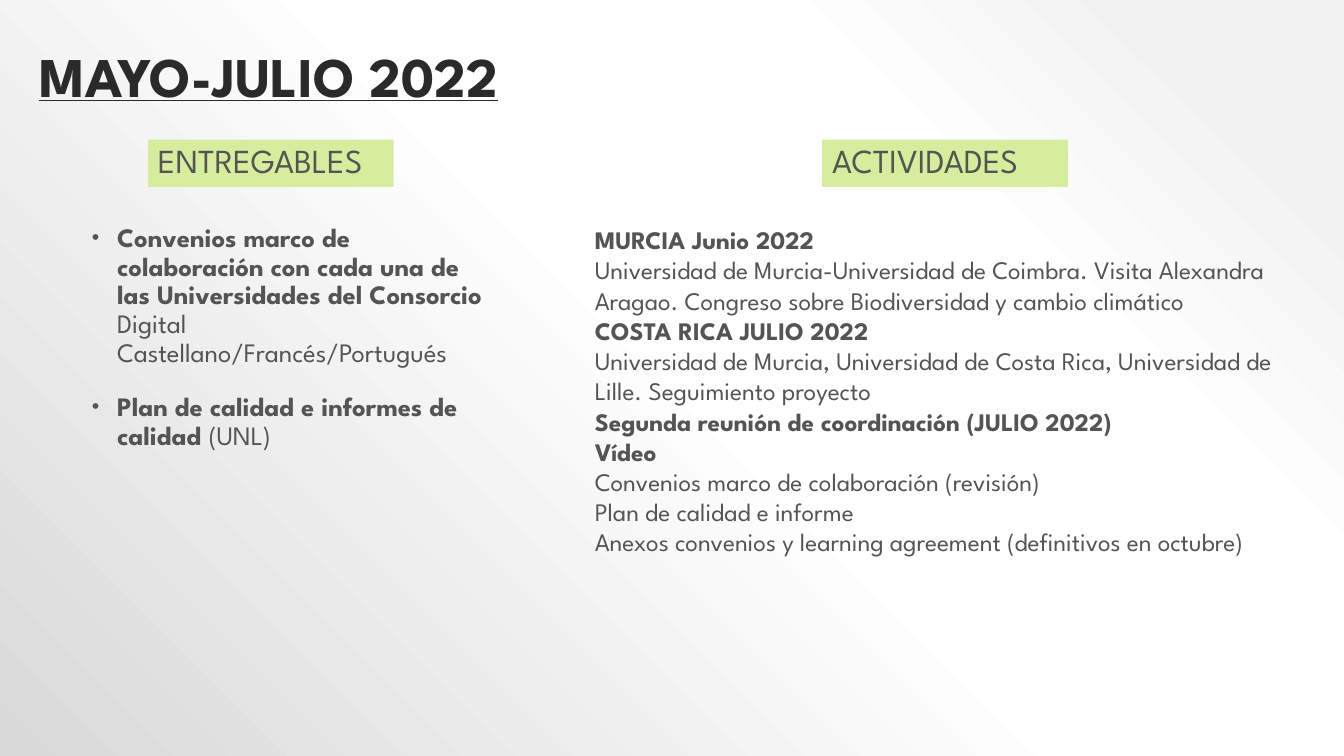
from lxml import etree
from pptx import Presentation
from pptx.dml.color import RGBColor
from pptx.enum import shapes, text
from pptx.oxml import ns, parse_xml
from pptx.util import Pt

PX = 9525
FONT = "League Spartan"
INK = RGBColor(0x2A, 0x2A, 0x2A)
GREY = RGBColor(0x54, 0x54, 0x54)
LIME = RGBColor(0xD7, 0xED, 0x9E)
BACKDROP = [(10, "F2F2F2"), (28, "FFFFFF"), (48, "FFFFFF"), (100, "D9D9D9")]

DELIVERABLES = [
    [("Convenios marco de colaboración con cada una de las Universidades del Consorcio ", True),
     ("Digital Castellano/Francés/Portugués", False)],
    [("Plan de calidad e informes de calidad ", True), ("(UNL)", False)],
]
ACTIVITIES = [
    ("MURCIA Junio 2022", True),
    ("Universidad de Murcia-Universidad de Coimbra. Visita Alexandra Aragao. "
     "Congreso sobre Biodiversidad y cambio climático", False),
    ("COSTA RICA JULIO 2022", True),
    ("Universidad de Murcia, Universidad de Costa Rica, Universidad de Lille. "
     "Seguimiento proyecto", False),
    ("Segunda reunión de coordinación (JULIO 2022)", True),
    ("Vídeo", True),
    ("Convenios marco de colaboración (revisión)", False),
    ("Plan de calidad e informe", False),
    ("Anexos convenios y learning agreement (definitivos en octubre)", False),
]


def emu(box):
    return [length * PX for length in box]


def place(shape, box):
    shape.left, shape.top, shape.width, shape.height = emu(box)


def write(frame, paragraphs, size, color=GREY, spacing=None, before=0,
          underline=False, anchor=text.MSO_ANCHOR.TOP):
    """Fill a frame with paragraphs, each a list of (wording, bold) spans."""
    frame.word_wrap = True
    frame.auto_size = text.MSO_AUTO_SIZE.NONE
    frame.vertical_anchor = anchor
    for index, spans in enumerate(paragraphs):
        para = frame.add_paragraph() if index else frame.paragraphs[0]
        para.alignment = text.PP_ALIGN.LEFT
        para.space_before = Pt(before)
        if spacing:
            para.line_spacing = spacing
        for wording, bold in spans:
            span = para.add_run()
            span.text = wording
            font = span.font
            font.name, font.size, font.bold = FONT, Pt(size), bold
            font.underline = underline
            font.color.rgb = color


def add_bullet(para, margin, hang):
    properties = para._p.get_or_add_pPr()
    properties.set("marL", str(margin * PX))
    properties.set("indent", str(-hang * PX))
    color = etree.SubElement(properties, ns.qn("a:buClr"))
    etree.SubElement(color, ns.qn("a:srgbClr"), val=str(GREY))
    etree.SubElement(properties, ns.qn("a:buSzPct"), val="80000")
    etree.SubElement(properties, ns.qn("a:buFont"), typeface="Arial")
    etree.SubElement(properties, ns.qn("a:buChar"), char="•")


def paint_background(page):
    """Circular gradient centred on the top right corner."""
    stops = "".join(f'<a:gs pos="{percent * 1000}"><a:srgbClr val="{color}"/></a:gs>'
                    for percent, color in BACKDROP)
    page.background.fill.solid()
    solid = page._element.find(".//" + ns.qn("p:bgPr")).find(ns.qn("a:solidFill"))
    gradient = parse_xml(
        f'<a:gradFill {ns.nsdecls("a")} rotWithShape="1"><a:gsLst>{stops}</a:gsLst>'
        '<a:path path="circle"><a:fillToRect l="100000" b="100000"/></a:path></a:gradFill>')
    solid.getparent().replace(solid, gradient)


def fill_title(page, box):
    title = page.shapes.title
    place(title, box)
    write(title.text_frame, [[("MAYO-JULIO 2022", True)]], 40, color=INK, spacing=0.9,
          underline=True, anchor=text.MSO_ANCHOR.BOTTOM)
    title.text_frame.margin_bottom = 62 * PX


def add_heading(page, wording, box):
    label = page.shapes.add_shape(shapes.MSO_SHAPE.RECTANGLE, *emu(box))
    label.shadow.inherit = False
    label.fill.solid()
    label.fill.fore_color.rgb = LIME
    label.line.fill.background()
    write(label.text_frame, [[(wording, False)]], 24, spacing=0.9)


def fill_deliverables(page, box):
    body = page.placeholders[1]
    place(body, box)
    write(body.text_frame, DELIVERABLES, 19, spacing=0.9, before=18)
    for para in body.text_frame.paragraphs:
        add_bullet(para, margin=29, hang=24)


def add_activities(page, box):
    activities = page.shapes.add_textbox(*emu(box))
    write(activities.text_frame, [[line] for line in ACTIVITIES], 18)


def main():
    deck = Presentation()
    deck.slide_width, deck.slide_height = emu((1280, 720))
    page = deck.slides.add_slide(deck.slide_layouts[1])
    paint_background(page)
    fill_title(page, (28, 39, 1024, 127))
    fill_deliverables(page, (73, 209, 400, 349))
    for wording, left in (("ENTREGABLES", 141), ("ACTIVIDADES", 783)):
        add_heading(page, wording, (left, 133, 234, 45))
    add_activities(page, (557, 209, 688, 388))
    deck.save("out.pptx")


if __name__ == "__main__":
    main()
